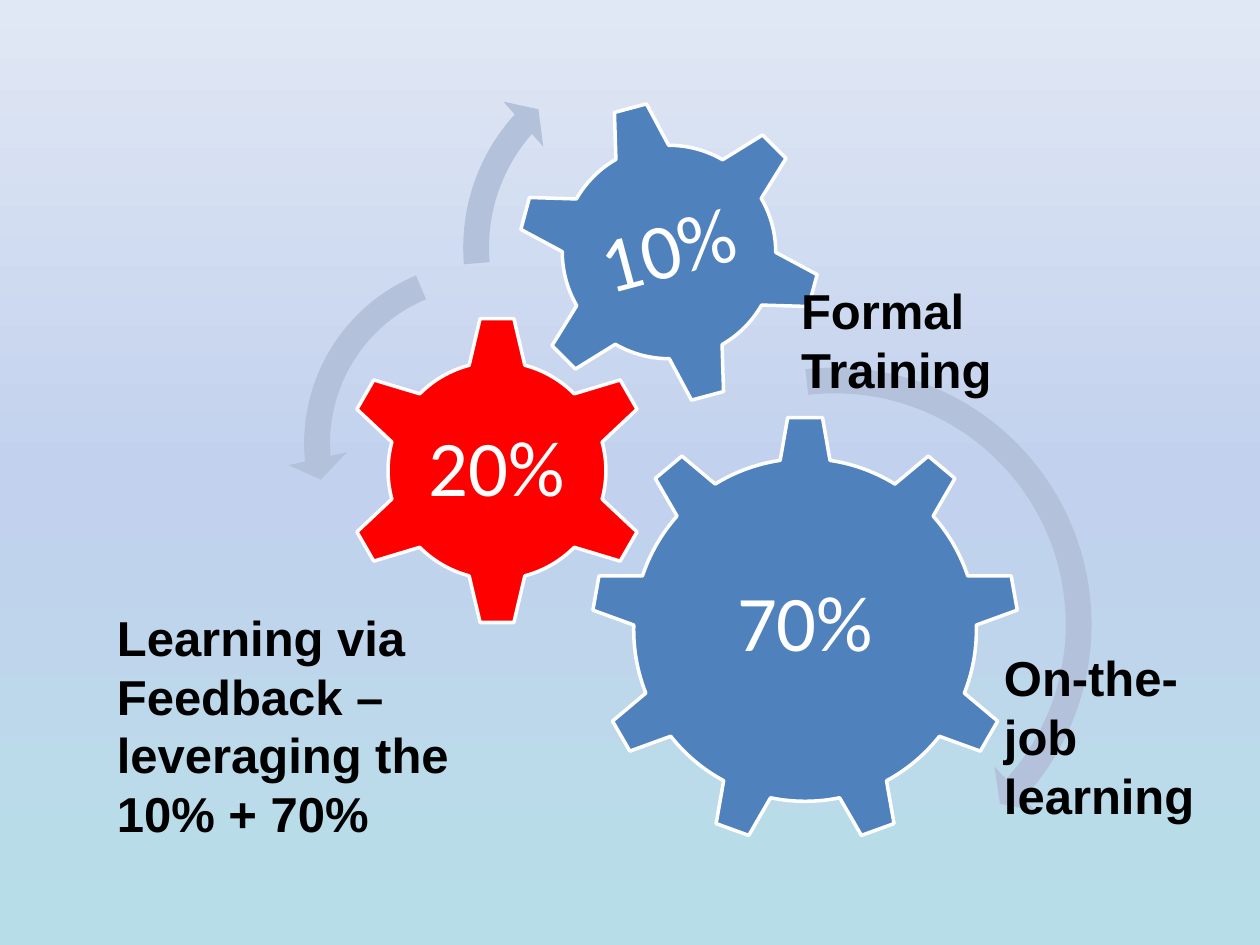
from copy import deepcopy
from dataclasses import dataclass

from pptx import Presentation
from pptx.dml.color import RGBColor
from pptx.enum.shapes import MSO_SHAPE
from pptx.enum.text import MSO_ANCHOR, PP_ALIGN
from pptx.oxml.ns import qn
from pptx.util import Inches, Pt

BLUE, RED, WHITE, BLACK, ARROW = "4F81BD", "FF0000", "FFFFFF", "000000", "B3C1DB"
SKY = [(0, "B7DEE8"), (0.5, "C2D1ED"), (1, "E1E8F5")]
GEAR_FONT = {"name": "Calibri", "size": Pt(45), "bold": False}
LABEL_FONT = {"name": "Arial", "size": Pt(28), "bold": True}
GEAR_FRAME = {
    "word_wrap": False,
    "vertical_anchor": MSO_ANCHOR.MIDDLE,
    "margin_left": Inches(0.06),
    "margin_right": Inches(0.06),
    "margin_top": Inches(0.06),
    "margin_bottom": Inches(0.06),
}


@dataclass
class Gear:
    text: str
    left: float
    top: float
    size: float
    kind: MSO_SHAPE
    color: str
    rotation: float = 0


@dataclass
class Arrow:
    left: float
    top: float
    size: float
    kind: MSO_SHAPE
    adjustments: tuple[float, ...]


@dataclass
class Label:
    text: str
    left: float
    top: float
    width: float
    height: float


GEARS = [
    Gear("70%", 4.69, 3.3, 3.4, MSO_SHAPE.GEAR_9, BLUE),
    Gear("20%", 2.71, 2.5, 2.47, MSO_SHAPE.GEAR_6, RED),
    Gear("10%", 4.1, 0.79, 2.42, MSO_SHAPE.GEAR_6, BLUE, 345),
]
ARROWS = [
    Arrow(4.45, 2.78, 4.35, MSO_SHAPE.CIRCULAR_ARROW, (0.047, 2.99, 25.43, 158.05, 0.055)),
    Arrow(2.28, 1.94, 3.16, MSO_SHAPE.LEFT_CIRCULAR_ARROW, (0.065, 4.3, 104.89, 148.38, 0.075)),
    Arrow(3.54, 0.26, 3.41, MSO_SHAPE.CIRCULAR_ARROW, (0.06, 3.94, 133.14, 105.08, 0.07)),
]
LABELS = [
    Label("Learning via Feedback – leveraging the 10% + 70%", 0.83, 4.77, 3.7, 1.99),
    Label("Formal Training", 6.26, 2.18, 2.52, 1.04),
    Label("On-the-job learning", 7.87, 5.09, 2.13, 1.52),
]


def rgb(color: str) -> RGBColor:
    return RGBColor.from_string(color)


def apply(target, values: dict) -> None:
    for name, value in values.items():
        setattr(target, name, value)


def paint_background(s) -> None:
    fill = s.background.fill
    fill.gradient()
    fill.gradient_angle = 90
    stops = s.element.find(".//" + qn("a:gsLst"))
    stops.append(deepcopy(stops[-1]))
    for stop, (position, color) in zip(fill.gradient_stops, SKY):
        stop.position = position
        stop.color.rgb = rgb(color)


def write(tf, text: str, font: dict, color: str):
    p = tf.paragraphs[0]
    r = p.add_run()
    r.text = text
    apply(r.font, font)
    r.font.color.rgb = rgb(color)
    return p


def add_square(s, item: Gear | Arrow, color: str):
    size = Inches(item.size)
    sp = s.shapes.add_shape(item.kind, Inches(item.left), Inches(item.top), size, size)
    sp.shadow.inherit = False
    sp.fill.solid()
    sp.fill.fore_color.rgb = rgb(color)
    return sp


def draw_gear(s, gear: Gear) -> None:
    sp = add_square(s, gear, gear.color)
    sp.rotation = gear.rotation
    sp.line.color.rgb = rgb(WHITE)
    sp.line.width = Pt(2)
    apply(sp.text_frame, GEAR_FRAME)
    p = write(sp.text_frame, gear.text, GEAR_FONT, WHITE)
    apply(p, {"alignment": PP_ALIGN.CENTER, "line_spacing": 0.9})


def draw_arrow(s, arrow: Arrow) -> None:
    sp = add_square(s, arrow, ARROW)
    sp.line.fill.background()
    for i, value in enumerate(arrow.adjustments):
        sp.adjustments[i] = value


def draw_label(s, label: Label) -> None:
    box = (label.left, label.top, label.width, label.height)
    tf = s.shapes.add_textbox(*map(Inches, box)).text_frame
    tf.word_wrap = True
    write(tf, label.text, LABEL_FONT, BLACK)


def main() -> None:
    prs = Presentation()
    prs.slide_width, prs.slide_height = Inches(10), Inches(7.5)
    s = prs.slides.add_slide(prs.slide_layouts[6])
    paint_background(s)
    for gear in GEARS:
        draw_gear(s, gear)
    for arrow in ARROWS:
        draw_arrow(s, arrow)
    for label in LABELS:
        draw_label(s, label)
    prs.save("out.pptx")


if __name__ == "__main__":
    main()
